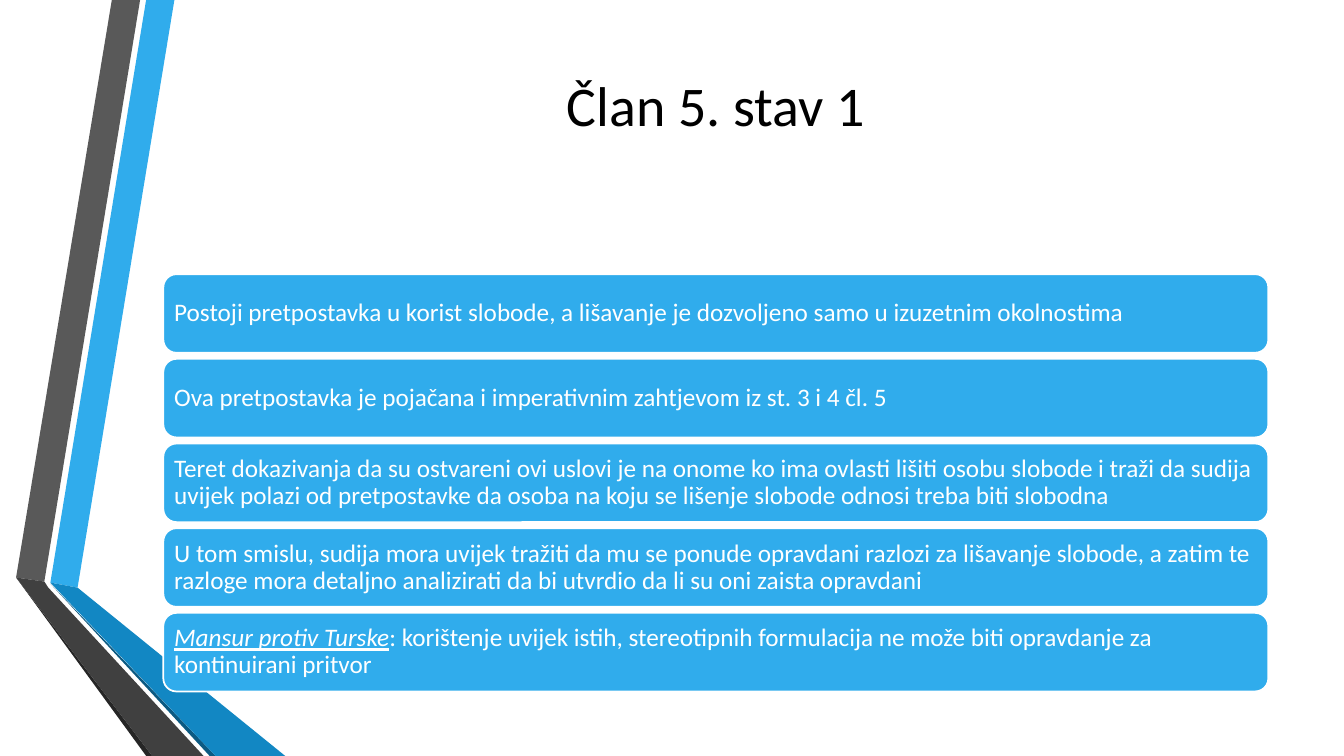
from pptx import Presentation
from pptx.dml.color import RGBColor
from pptx.enum import shapes, text
from pptx.util import Inches, Pt

WHITE = RGBColor(0xFF, 0xFF, 0xFF)
BLACK = RGBColor(0x00, 0x00, 0x00)
BLUE = RGBColor(0x30, 0xAC, 0xEC)
MID_BLUE = RGBColor(0x12, 0x87, 0xC3)
DARK_BLUE = RGBColor(0x0C, 0x5A, 0x82)
GREY = RGBColor(0x59, 0x59, 0x59)
DARK_GREY = RGBColor(0x40, 0x40, 0x40)
NEAR_BLACK = RGBColor(0x26, 0x26, 0x26)
FONT = "Calibri"

LEFT, WIDTH = 1.62, 10.96
TOP, HEIGHT, STEP = 2.72, 0.78, 0.84

RIBBONS = [
    (BLUE, [(0.5, 5.78), (0.77, 5.83), (1.73, 0), (1.45, 0)]),
    (GREY, [(1.39, 0), (1.11, 0), (0.16, 5.73), (0.44, 5.77)]),
    (NEAR_BLACK, [(0.16, 5.73), (1.45, 7.5), (1.51, 7.5)]),
    (DARK_BLUE, [(0.5, 5.79), (2.08, 7.5), (2.14, 7.5)]),
    (MID_BLUE, [(0.5, 5.78), (2.14, 7.5), (2.83, 7.5), (0.77, 5.83)]),
    (DARK_GREY, [(2.02, 7.5), (0.48, 5.83), (0.44, 5.77), (0.16, 5.73),
                 (1.51, 7.5)]),
]

CASE = {"italic": True, "underline": True}
POINTS = [
    [("Postoji pretpostavka u korist slobode, a lišavanje je dozvoljeno "
      "samo u izuzetnim okolnostima", {})],
    [("Ova pretpostavka je pojačana i imperativnim zahtjevom iz "
      "st. 3 i 4 čl. 5", {})],
    [("Teret dokazivanja da su ostvareni ovi uslovi je na onome ko ima "
      "ovlasti lišiti osobu slobode i traži da sudija uvijek polazi od "
      "pretpostavke da osoba na koju se lišenje slobode odnosi treba biti "
      "slobodna", {})],
    [("U tom smislu, sudija mora uvijek tražiti da mu se ponude opravdani "
      "razlozi za lišavanje slobode, a zatim te razloge mora detaljno "
      "analizirati da bi utvrdio da li su oni zaista opravdani", {})],
    [("Mansur protiv Turske", CASE),
     (": korištenje uvijek istih, stereotipnih formulacija ne može biti "
      "opravdanje za kontinuirani pritvor", {})],
]


def apply(item, values):
    for name, value in values.items():
        setattr(item, name, value)


def paint(shape, color):
    shape.shadow.inherit = False
    shape.fill.solid()
    shape.fill.fore_color.rgb = color


def add_run(para, words, size, color, style):
    run = para.add_run()
    run.text = words
    apply(run.font, {"name": FONT, "size": Pt(size), **style})
    run.font.color.rgb = color


def add_ribbon(slide, color, corners):
    start, *rest = [(Inches(x), Inches(y)) for x, y in corners]
    builder = slide.shapes.build_freeform(*start)
    builder.add_line_segments(rest, close=True)
    ribbon = builder.convert_to_shape()
    paint(ribbon, color)
    ribbon.line.fill.background()


def set_title(slide, words):
    title = slide.shapes.title
    apply(title, {"left": Inches(LEFT), "top": Inches(0.17),
                  "width": Inches(WIDTH), "height": Inches(1.72)})
    title.text_frame.vertical_anchor = text.MSO_ANCHOR.MIDDLE
    para = title.text_frame.paragraphs[0]
    para.alignment = text.PP_ALIGN.CENTER
    add_run(para, words, 40, BLACK, {})


def add_bar(slide, top, runs):
    bar = slide.shapes.add_shape(
        shapes.MSO_SHAPE.ROUNDED_RECTANGLE,
        Inches(LEFT), Inches(top), Inches(WIDTH), Inches(HEIGHT))
    paint(bar, BLUE)
    bar.line.color.rgb = WHITE
    bar.line.width = Pt(1.25)
    frame = bar.text_frame
    sides = ("left", "top", "right", "bottom")
    apply(frame, {f"margin_{side}": Inches(0.07) for side in sides})
    apply(frame, {"word_wrap": True,
                  "vertical_anchor": text.MSO_ANCHOR.MIDDLE})
    para = frame.paragraphs[0]
    apply(para, {"alignment": text.PP_ALIGN.LEFT, "line_spacing": 0.9})
    for words, style in runs:
        add_run(para, words, 18, WHITE, style)


def main():
    deck = Presentation()
    apply(deck, {"slide_width": Inches(13.33), "slide_height": Inches(7.5)})
    slide = deck.slides.add_slide(deck.slide_layouts[5])
    for color, corners in RIBBONS:
        add_ribbon(slide, color, corners)
    set_title(slide, "Član 5. stav 1")
    for row, runs in enumerate(POINTS):
        add_bar(slide, TOP + row * STEP, runs)
    deck.save("out.pptx")


if __name__ == "__main__":
    main()
